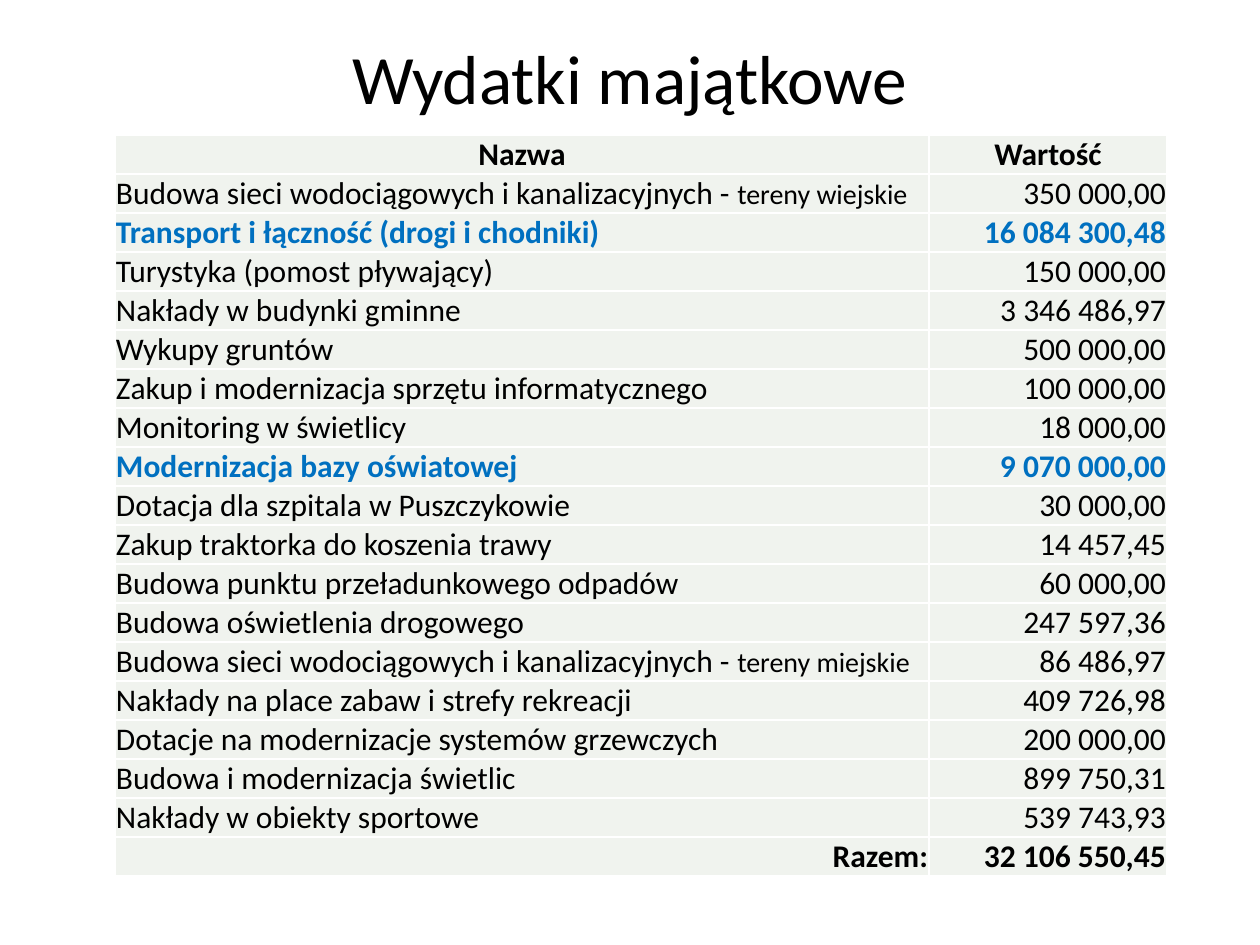
from lxml.etree import SubElement
from pptx import Presentation
from pptx.dml.color import RGBColor
from pptx.enum.text import MSO_ANCHOR as Anchor, PP_ALIGN as Align
from pptx.oxml.ns import qn
from pptx.util import Pt

PX = 914400 / 126
COLORS = {"text": "000000", "accent": "0070C0", "cell": "F0F3EE", "border": "FFFFFF"}


def px(length):
    return round(length * PX)


def add_text(paragraph, text, size=18, color="text", bold=False, align=Align.LEFT):
    paragraph.alignment = align
    run = paragraph.add_run()
    run.text = text
    run.font.name = "Calibri"
    run.font.size = Pt(size)
    run.font.bold = bold
    run.font.color.rgb = RGBColor.from_string(COLORS[color])


expenses = [
    ("Nazwa", "Wartość"),
    ("Budowa sieci wodociągowych i kanalizacyjnych - |tereny wiejskie", "350 000,00"),
    ("Transport i łączność (drogi i chodniki)", "16 084 300,48"),
    ("Turystyka (pomost pływający)", "150 000,00"),
    ("Nakłady w budynki gminne", "3 346 486,97"),
    ("Wykupy gruntów", "500 000,00"),
    ("Zakup i modernizacja sprzętu informatycznego", "100 000,00"),
    ("Monitoring w świetlicy", "18 000,00"),
    ("Modernizacja bazy oświatowej", "9 070 000,00"),
    ("Dotacja dla szpitala w Puszczykowie", "30 000,00"),
    ("Zakup traktorka do koszenia trawy", "14 457,45"),
    ("Budowa punktu przeładunkowego odpadów", "60 000,00"),
    ("Budowa oświetlenia drogowego", "247 597,36"),
    ("Budowa sieci wodociągowych i kanalizacyjnych - |tereny miejskie", "86 486,97"),
    ("Nakłady na place zabaw i strefy rekreacji", "409 726,98"),
    ("Dotacje na modernizacje systemów grzewczych", "200 000,00"),
    ("Budowa i modernizacja świetlic", "899 750,31"),
    ("Nakłady w obiekty sportowe", "539 743,93"),
    ("Razem:", "32 106 550,45"),
]
header_row, total_row = 0, len(expenses) - 1
highlighted_rows = {2, 8}
column_widths = [814, 238]
row_height = 39

prs = Presentation()
prs.slide_width, prs.slide_height = px(1260), px(945)
slide = prs.slides.add_slide(prs.slide_layouts[6])

title = slide.shapes.add_textbox(px(63), px(38), px(1134), px(77)).text_frame
title.word_wrap = True
title.vertical_anchor = Anchor.MIDDLE
add_text(title.paragraphs[0], "Wydatki majątkowe", size=39.6, align=Align.CENTER)

table = slide.shapes.add_table(
    len(expenses), len(column_widths), px(115), px(135),
    px(sum(column_widths)), px(row_height * len(expenses)),
).table
for column, width in zip(table.columns, column_widths):
    column.width = px(width)

for row, entry in enumerate(expenses):
    table.rows[row].height = px(row_height)
    bold = row in highlighted_rows | {header_row, total_row}
    color = "accent" if row in highlighted_rows else "text"
    for col, content in enumerate(entry):
        cell = table.cell(row, col)
        cell.vertical_anchor = Anchor.BOTTOM
        cell.margin_left = cell.margin_right = cell.margin_top = px(1)
        cell.margin_bottom = 0
        if row == header_row:
            align = Align.CENTER
        elif col == 1 or row == total_row:
            align = Align.RIGHT
        else:
            align = Align.LEFT
        for text, size in zip(content.split("|"), (18, 16)):
            add_text(cell.text_frame.paragraphs[0], text, size=size,
                     color=color, bold=bold, align=align)
        properties = cell._tc.get_or_add_tcPr()
        for side in ("lnL", "lnR", "lnT", "lnB"):
            line = SubElement(properties, qn(f"a:{side}"), w=str(Pt(1)))
            fill = SubElement(line, qn("a:solidFill"))
            SubElement(fill, qn("a:srgbClr"), val=COLORS["border"])
        cell.fill.solid()
        cell.fill.fore_color.rgb = RGBColor.from_string(COLORS["cell"])

prs.save("out.pptx")
